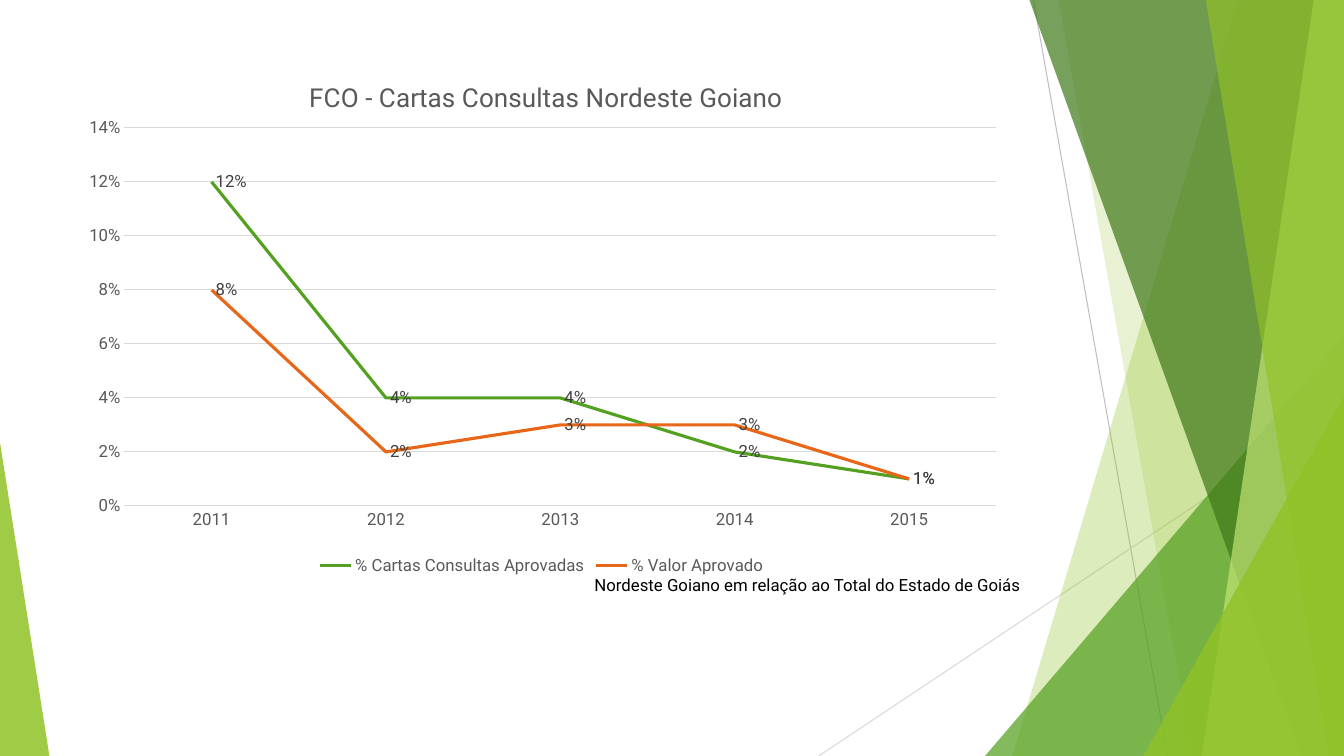
from dataclasses import dataclass

from lxml import etree
from pptx import Presentation
from pptx.chart.data import CategoryChartData
from pptx.dml.color import RGBColor
from pptx.enum.chart import XL_CHART_TYPE, XL_LABEL_POSITION, XL_LEGEND_POSITION, XL_TICK_MARK
from pptx.enum.shapes import MSO_CONNECTOR, MSO_SHAPE
from pptx.enum.text import MSO_ANCHOR, MSO_AUTO_SIZE, PP_ALIGN
from pptx.oxml.ns import qn
from pptx.util import Inches, Pt

LINE = XL_CHART_TYPE.LINE
RIGHT = XL_LABEL_POSITION.RIGHT
BOTTOM = XL_LEGEND_POSITION.BOTTOM
NO_TICK = XL_TICK_MARK.NONE
STRAIGHT = MSO_CONNECTOR.STRAIGHT
TRIANGLE = MSO_SHAPE.ISOSCELES_TRIANGLE
TOP = MSO_ANCHOR.TOP
NO_FIT = MSO_AUTO_SIZE.NONE
CENTER = PP_ALIGN.CENTER


@dataclass(frozen=True)
class Theme:
    face: str = "Roboto"
    black: str = "000000"
    label: str = "404040"
    text: str = "595959"
    rule: str = "BFBFBF"
    grid: str = "D9D9D9"
    lime: str = "90C226"
    pale: str = "C0E474"
    green: str = "54A021"
    dark: str = "3F7819"
    orange: str = "E76618"
    body: float = 12
    head: float = 18.6
    thin: float = 0.75
    thick: float = 2.25


THEME = Theme()
WIDE, HIGH = 13.33, 7.5


def style(font, size, color):
    font.name = THEME.face
    font.size = Pt(size)
    font.bold = False
    font.color.rgb = RGBColor.from_string(color)


def stroke(line, color, width):
    line.color.rgb = RGBColor.from_string(color)
    line.width = Pt(width)


def paint(shape, color, alpha):
    shape.shadow.inherit = False
    shape.line.fill.background()
    shape.fill.solid()
    shape.fill.fore_color.rgb = RGBColor.from_string(color)
    tone = shape.fill._xPr.find(qn("a:solidFill"))[0]
    etree.SubElement(tone, qn("a:alpha")).set("val", str(alpha * 1000))


def add_rule(shapes, start, end, color):
    rule = shapes.add_connector(STRAIGHT, *map(Inches, start + end))
    stroke(rule.line, color, THEME.thin)
    etree.SubElement(rule._element.spPr, qn("a:effectLst"))


def add_band(shapes, box, top, foot, color, alpha):
    left, head, width, height = box
    right, base = left + width, head + height
    points = [(top, head), (right, head), (right, base), (foot, base)]
    points = [(Inches(x), Inches(y)) for x, y in points]
    form = shapes.build_freeform(*points[0])
    form.add_line_segments(points[1:], close=True)
    paint(form.convert_to_shape(), color, alpha)


def add_wedge(shapes, left, width, height, tip, color, alpha):
    wedge = shapes.add_shape(
        TRIANGLE, Inches(left), Inches(HIGH - height), Inches(width), Inches(height))
    wedge.adjustments[0] = tip
    paint(wedge, color, alpha)


def add_decor(shapes, box):
    left, top, width, height = box
    right, base = left + width, top + height
    add_rule(shapes, (10.25, 0), (11.58, base), THEME.rule)
    add_rule(shapes, (right, 4.03), (8.12, base), THEME.grid)
    add_band(shapes, box, 12.28, 10.04, THEME.lime, 30)
    add_band(shapes, box, 10.5, 11.83, THEME.lime, 20)
    add_wedge(shapes, right - 3.56, 3.56, 4.17, 1, THEME.green, 72)
    add_band(shapes, box, 10.21, 12.91, THEME.dark, 70)
    add_band(shapes, box, 13.03, 11.92, THEME.pale, 70)
    add_band(shapes, box, 11.96, 13.18, THEME.lime, 65)
    add_wedge(shapes, right - 1.99, 1.99, 3.57, 1, THEME.lime, 80)
    add_wedge(shapes, 0, 0.49, 3.11, 0, THEME.lime, 85)


def set_layout(parent, index, target=None, **sizes):
    old = parent.find(qn("c:layout"))
    if old is not None:
        parent.remove(old)
    layout = etree.Element(qn("c:layout"))
    manual = etree.SubElement(layout, qn("c:manualLayout"))
    if target:
        etree.SubElement(manual, qn("c:layoutTarget")).set("val", target)
    for mode in ("xMode", "yMode"):
        etree.SubElement(manual, qn("c:" + mode)).set("val", "edge")
    for name, size in sizes.items():
        etree.SubElement(manual, qn("c:" + name)).set("val", str(size))
    parent.insert(index, layout)


def add_graph(shapes, box):
    data = CategoryChartData(number_format="0%")
    data.categories = ["2011", "2012", "2013", "2014", "2015"]
    data.add_series("% Cartas Consultas Aprovadas", [0.12, 0.04, 0.04, 0.02, 0.01])
    data.add_series("% Valor Aprovado", [0.08, 0.02, 0.03, 0.03, 0.01])
    chart = shapes.add_chart(LINE, *map(Inches, box), data).chart
    style(chart.font, THEME.body, THEME.text)

    chart.has_title = True
    title = chart.chart_title
    title.include_in_layout = False
    title.text_frame.text = "FCO - Cartas Consultas Nordeste Goiano"
    style(title.text_frame.paragraphs[0].runs[0].font, THEME.head, THEME.text)
    set_layout(title._element, 1, x=0.25, y=0.04)

    chart.has_legend = True
    chart.legend.position = BOTTOM
    chart.legend.include_in_layout = False
    style(chart.legend.font, THEME.body, THEME.text)

    for axis in (chart.category_axis, chart.value_axis):
        axis.major_tick_mark = axis.minor_tick_mark = NO_TICK
        style(axis.tick_labels.font, THEME.body, THEME.text)
    stroke(chart.category_axis.format.line, THEME.grid, THEME.thin)
    scale = chart.value_axis
    scale.minimum_scale, scale.maximum_scale, scale.major_unit = 0, 0.14, 0.02
    scale.tick_labels.number_format = "0%"
    scale.tick_labels.number_format_is_linked = False
    scale.format.line.fill.background()
    stroke(scale.major_gridlines.format.line, THEME.grid, THEME.thin)

    plot = chart.plots[0]
    plot.vary_by_categories = False
    for series, color in zip(plot.series, (THEME.green, THEME.orange)):
        series.smooth = False
        stroke(series.format.line, color, THEME.thick)
        labels = series.data_labels
        labels.show_value = True
        labels.position = RIGHT
        style(labels.font, THEME.body, THEME.label)
    area = chart._chartSpace.chart.plotArea
    set_layout(area, 0, "inner", x=0.06, y=0.14, w=0.92, h=0.72)


def add_note(slide, box):
    note = slide.shapes.title
    note.left, note.top, note.width, note.height = map(Inches, box)
    frame = note.text_frame
    frame.text = "Nordeste Goiano em relação ao Total do Estado de Goiás"
    frame.word_wrap = True
    frame.auto_size = NO_FIT
    frame.vertical_anchor = TOP
    line = frame.paragraphs[0]
    line.alignment = CENTER
    style(line.runs[0].font, THEME.body, THEME.black)


def main():
    deck = Presentation()
    deck.slide_width, deck.slide_height = Inches(WIDE), Inches(HIGH)
    slide = deck.slides.add_slide(deck.slide_layouts[5])
    add_decor(slide.shapes, (10.04, 0, 3.29, HIGH))
    add_graph(slide.shapes, (0.67, 0.54, 9.4, 5.21))
    add_note(slide, (3.31, 5.65, 9.4, 1.44))
    deck.save("out.pptx")


if __name__ == "__main__":
    main()
